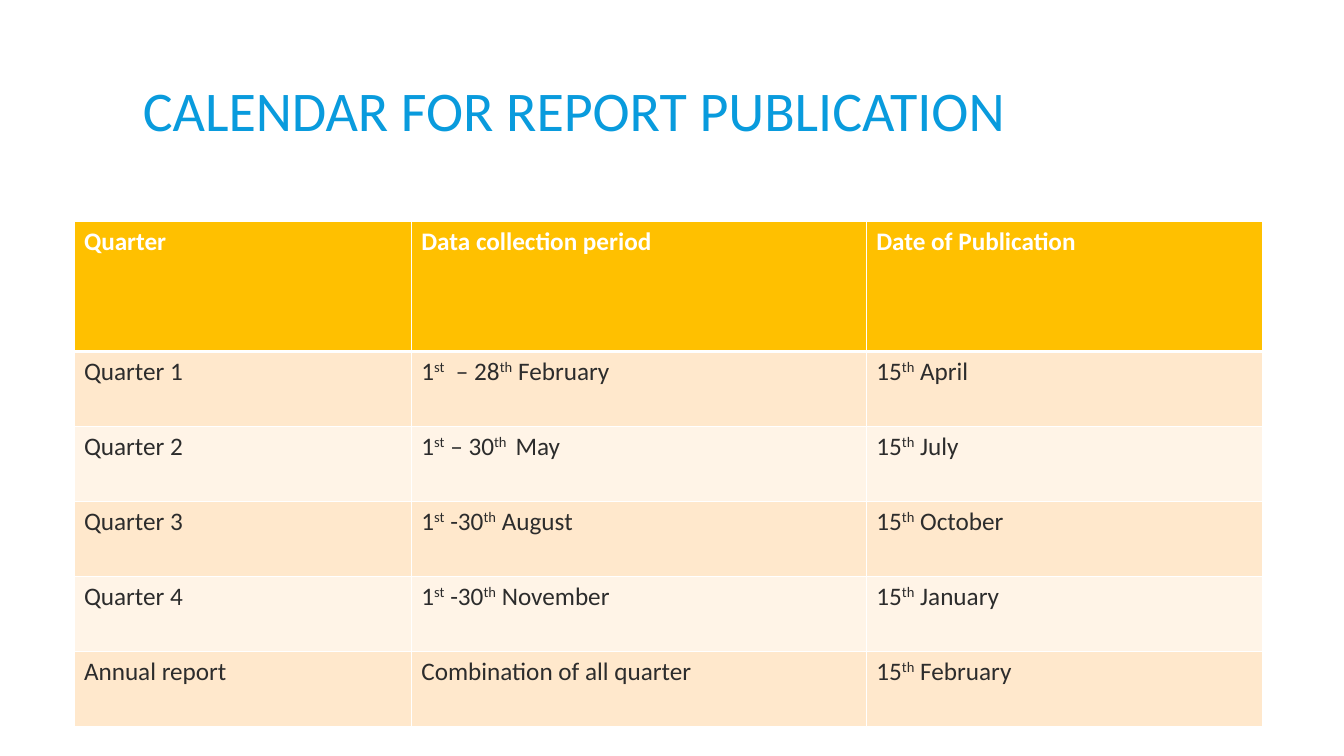
from lxml import etree
from pptx import Presentation, util as u
from pptx.dml.color import RGBColor
from pptx.enum import text
from pptx.oxml import ns

HEADING = "CALENDAR FOR REPORT PUBLICATION"
COLUMN_HEADS = ["Quarter", "Data collection period", "Date of Publication"]
# Pieces of a cell alternate between baseline and superscript.
REPORTS = [
    [("Quarter 1",), ("1", "st", "  – 28", "th", " February"), ("15", "th", " April")],
    [("Quarter 2",), ("1", "st", " – 30", "th ", " May"), ("15", "th", " July")],
    [("Quarter 3",), ("1", "st", " -30", "th", " August"), ("15", "th", " October")],
    [("Quarter 4",), ("1", "st", " -30", "th", " November"), ("15", "th", " January")],
    [("Annual report",), ("Combination of all quarter",), ("15", "th", " February")],
]

FONT = "Calibri"
BLUE = RGBColor(0x09, 0x9B, 0xDD)
GOLD = RGBColor(0xFF, 0xC0, 0x00)
PEACH = RGBColor(0xFF, 0xE8, 0xCC)
CREAM = RGBColor(0xFF, 0xF4, 0xE7)
INK = RGBColor(0x2C, 0x2C, 0x2C)
WHITE = RGBColor(0xFF, 0xFF, 0xFF)

COLUMN_WIDTHS = [241, 325, 283]
HEAD_HEIGHT, REPORT_HEIGHT = 92.6, 53.6


def add_run(paragraph, wording, size, color, bold=False):
    run = paragraph.add_run()
    run.text = wording
    run.font.name = FONT
    run.font.size = u.Pt(size)
    run.font.color.rgb = color
    run.font.bold = bold
    return run


def add_border(cell, side, width):
    properties = cell._tc.get_or_add_tcPr()
    line = etree.SubElement(properties, ns.qn(f"a:ln{side}"), w=str(u.Pt(width)))
    fill = etree.SubElement(line, ns.qn("a:solidFill"))
    etree.SubElement(fill, ns.qn("a:srgbClr"), val=str(WHITE))


def fill_cell(cell, pieces, row):
    is_head = row == 0
    for side in "LRTB":
        meets_head = (is_head and side == "B") or (row == 1 and side == "T")
        add_border(cell, side, 3 if meets_head else 1)
    cell.fill.solid()
    cell.fill.fore_color.rgb = GOLD if is_head else (PEACH if row % 2 else CREAM)
    for position, piece in enumerate(pieces):
        run = add_run(cell.text_frame.paragraphs[0], piece, 18,
                      WHITE if is_head else INK, is_head)
        if position % 2:
            run.font._element.set("baseline", "30000")


deck = Presentation()
deck.slide_width, deck.slide_height = u.Pt(960), u.Pt(540)
slide = deck.slides.add_slide(deck.slide_layouts[6])

heading = slide.shapes.add_textbox(u.Pt(95), u.Pt(22.3), u.Pt(770.4), u.Pt(118.8)).text_frame
heading.word_wrap = True
heading.vertical_anchor = text.MSO_ANCHOR.MIDDLE
heading.paragraphs[0].line_spacing = 0.85
add_run(heading.paragraphs[0], HEADING, 40, BLUE)

rows = [[(head,) for head in COLUMN_HEADS]] + REPORTS
heights = [HEAD_HEIGHT] + [REPORT_HEIGHT] * len(REPORTS)
calendar = slide.shapes.add_table(
    len(rows), len(COLUMN_HEADS), u.Pt(52.8), u.Pt(158.4),
    u.Pt(sum(COLUMN_WIDTHS)), u.Pt(sum(heights))).table
for column, width in zip(calendar.columns, COLUMN_WIDTHS):
    column.width = u.Pt(width)
for row, (cells, height) in enumerate(zip(rows, heights)):
    calendar.rows[row].height = u.Pt(height)
    for column, pieces in enumerate(cells):
        fill_cell(calendar.cell(row, column), pieces, row)

deck.save("out.pptx")
